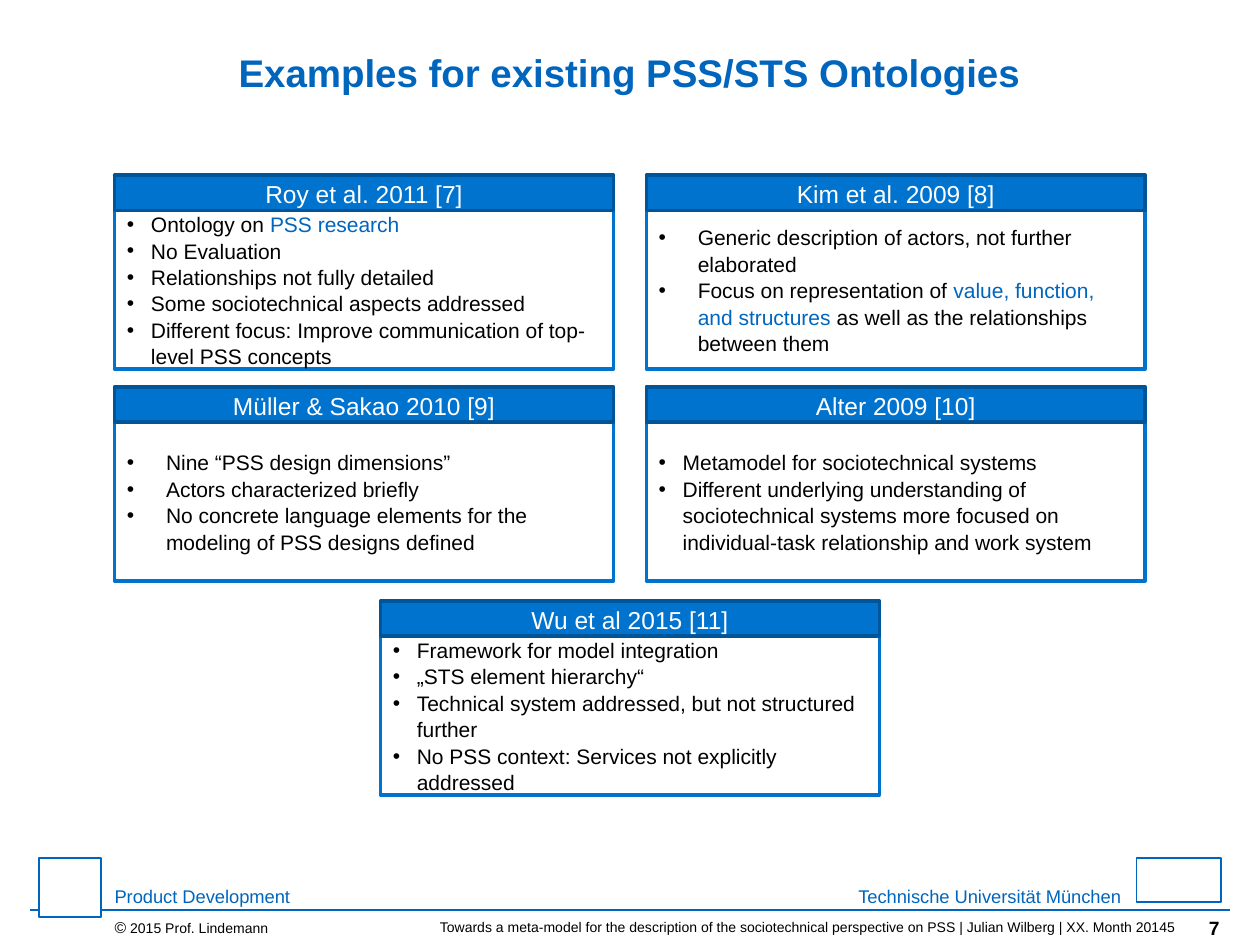
import pptx
import pptx.util
import pptx.dml.color
import pptx.enum.shapes
import pptx.enum.text
import pptx.oxml.ns
import lxml.etree

Inches = pptx.util.Inches
Pt = pptx.util.Pt
RGBColor = pptx.dml.color.RGBColor
SHAPE = pptx.enum.shapes.MSO_SHAPE
ALIGN = pptx.enum.text.PP_ALIGN
ANCHOR = pptx.enum.text.MSO_ANCHOR
qn = pptx.oxml.ns.qn

BLUE = RGBColor(0x00, 0x65, 0xBD)
BRIGHT = RGBColor(0x00, 0x73, 0xCF)
DARK = RGBColor(0x00, 0x55, 0x99)
BLACK = RGBColor(0, 0, 0)
WHITE = RGBColor(255, 255, 255)


def write(frame, paras, size=12, color=BLACK, bold=False, align=ALIGN.LEFT,
          anchor=ANCHOR.MIDDLE, inset=(0, 0), indent=None, spacing=1.0):
    """Fill a frame; a paragraph is a string or a list of (text, format) runs."""
    frame.word_wrap = True
    frame.auto_size = pptx.enum.text.MSO_AUTO_SIZE.NONE
    frame.vertical_anchor = anchor
    frame.margin_left = frame.margin_right = Inches(inset[0])
    frame.margin_top = frame.margin_bottom = Inches(inset[1])
    for i, runs in enumerate(paras):
        para = frame.add_paragraph() if i else frame.paragraphs[0]
        para.alignment = align
        para.line_spacing = spacing
        if indent:
            props = para._p.get_or_add_pPr()
            props.set("marL", str(Inches(indent)))
            props.set("indent", str(-Inches(indent)))
            lxml.etree.SubElement(props, qn("a:buFont"), typeface="Arial")
            lxml.etree.SubElement(props, qn("a:buChar"), char="•")
        for text, form in [(runs, {})] if isinstance(runs, str) else runs:
            run = para.add_run()
            run.text = text
            run.font.name = "Arial"
            run.font.size = Pt(form.get("size", size))
            run.font.bold = bold
            run.font.color.rgb = form.get("color", color)


def draw(kind, left, top, width, height, fill, line, weight):
    """Add a preset shape with a plain fill and outline."""
    shape = slide.shapes.add_shape(
        kind, Inches(left), Inches(top), Inches(width), Inches(height))
    shape.shadow.inherit = False
    shape.fill.solid()
    shape.fill.fore_color.rgb = fill
    shape.line.color.rgb = line
    shape.line.width = Pt(weight)
    return shape


deck = pptx.Presentation()
deck.slide_width = Inches(10)
deck.slide_height = Inches(7.5)
slide = deck.slides.add_slide(deck.slide_layouts[5])

# Title
title = slide.shapes.title
title.left, title.top = Inches(0.39), Inches(0.31)
title.width, title.height = Inches(9.21), Inches(0.55)
write(title.text_frame, ["Examples for existing PSS/STS Ontologies"], size=22,
      color=BLUE, bold=True, align=ALIGN.CENTER, anchor=ANCHOR.TOP,
      inset=(0.04, 0.04), spacing=1.1)

# Footer rule, with a plain block at each end
rule = slide.shapes.add_connector(
    pptx.enum.shapes.MSO_CONNECTOR.STRAIGHT,
    Inches(9.76), Inches(7.22), Inches(0.24), Inches(7.22))
rule.line.color.rgb = BLUE
rule.line.width = Pt(1)
lxml.etree.SubElement(rule._element.spPr, qn("a:effectLst"))
draw(SHAPE.RECTANGLE, 0.31, 6.81, 0.49, 0.47, WHITE, BLUE, 1)
draw(SHAPE.RECTANGLE, 9.02, 6.81, 0.67, 0.35, WHITE, BLUE, 1)

# Footer texts
TALK = ("Towards a meta-model for the description of the sociotechnical "
        "perspective on PSS | Julian Wilberg | XX. Month 20145")
OWNER = [("©", {"size": 9}), (" 2015 Prof. Lindemann", {})]
for text, left, top, width, height, form in [
    ("Product Development", 0.91, 6.99, 2.36, 0.24,
     dict(size=10.5, color=BLUE)),
    ("Technische Universität München", 6.54, 6.99, 2.36, 0.24,
     dict(size=10.5, color=BLUE, align=ALIGN.RIGHT)),
    (OWNER, 0.91, 7.22, 1.8, 0.28, dict(size=8)),
    (TALK, 2.8, 7.22, 6.54, 0.28, dict(size=8, align=ALIGN.RIGHT)),
    ("7", 9.21, 7.22, 0.47, 0.28,
     dict(size=11, bold=True, align=ALIGN.RIGHT)),
]:
    box = slide.shapes.add_textbox(
        Inches(left), Inches(top), Inches(width), Inches(height))
    write(box.text_frame, [text], **form)

# Ontology cards: two columns, with the last card centred below
WIDTH, HEAD, BODY = 3.96, 0.28, 1.26
LEFT, MID, RIGHT = 0.91, 3.02, 5.13
ROWS = [1.39, 3.07, 4.77]
ACCENT = {"color": BLUE}
cards = [
    (LEFT, ROWS[0], 0.19, "Roy et al. 2011 [7]", [
        [("Ontology on ", {}), ("PSS research", ACCENT)],
        "No Evaluation",
        "Relationships not fully detailed",
        "Some sociotechnical aspects addressed",
        "Different focus: Improve communication of top-level PSS concepts"]),
    (RIGHT, ROWS[0], 0.31, "Kim et al. 2009 [8]", [
        "Generic description of actors, not further elaborated",
        [("Focus on representation of ", {}),
         ("value, function, and structures ", ACCENT),
         ("as well as the relationships between them", {})]]),
    (LEFT, ROWS[1], 0.31, "Müller & Sakao 2010 [9]", [
        "Nine “PSS design dimensions”",
        "Actors characterized briefly",
        "No concrete language elements for the modeling of PSS designs "
        "defined"]),
    (RIGHT, ROWS[1], 0.19, "Alter 2009 [10]", [
        "Metamodel for sociotechnical systems",
        "Different underlying understanding of sociotechnical systems more "
        "focused on individual-task relationship and work system"]),
    (MID, ROWS[2], 0.19, "Wu et al 2015 [11]", [
        "Framework for model integration",
        "„STS element hierarchy“",
        "Technical system addressed, but not structured further",
        "No PSS context: Services not explicitly addressed"]),
]
for left, top, indent, name, points in cards:
    body = draw(SHAPE.RECTANGLE, left, top + HEAD, WIDTH, BODY,
                WHITE, BRIGHT, 2)
    write(body.text_frame, points, inset=(0.1, 0.05), indent=indent,
          spacing=1.05)
    head = draw(SHAPE.RECTANGLE, left, top, WIDTH, HEAD, BRIGHT, DARK, 2)
    write(head.text_frame, [name], size=14, color=WHITE, align=ALIGN.CENTER,
          inset=(0.1, 0.05), spacing=1.05)

deck.save("out.pptx")
